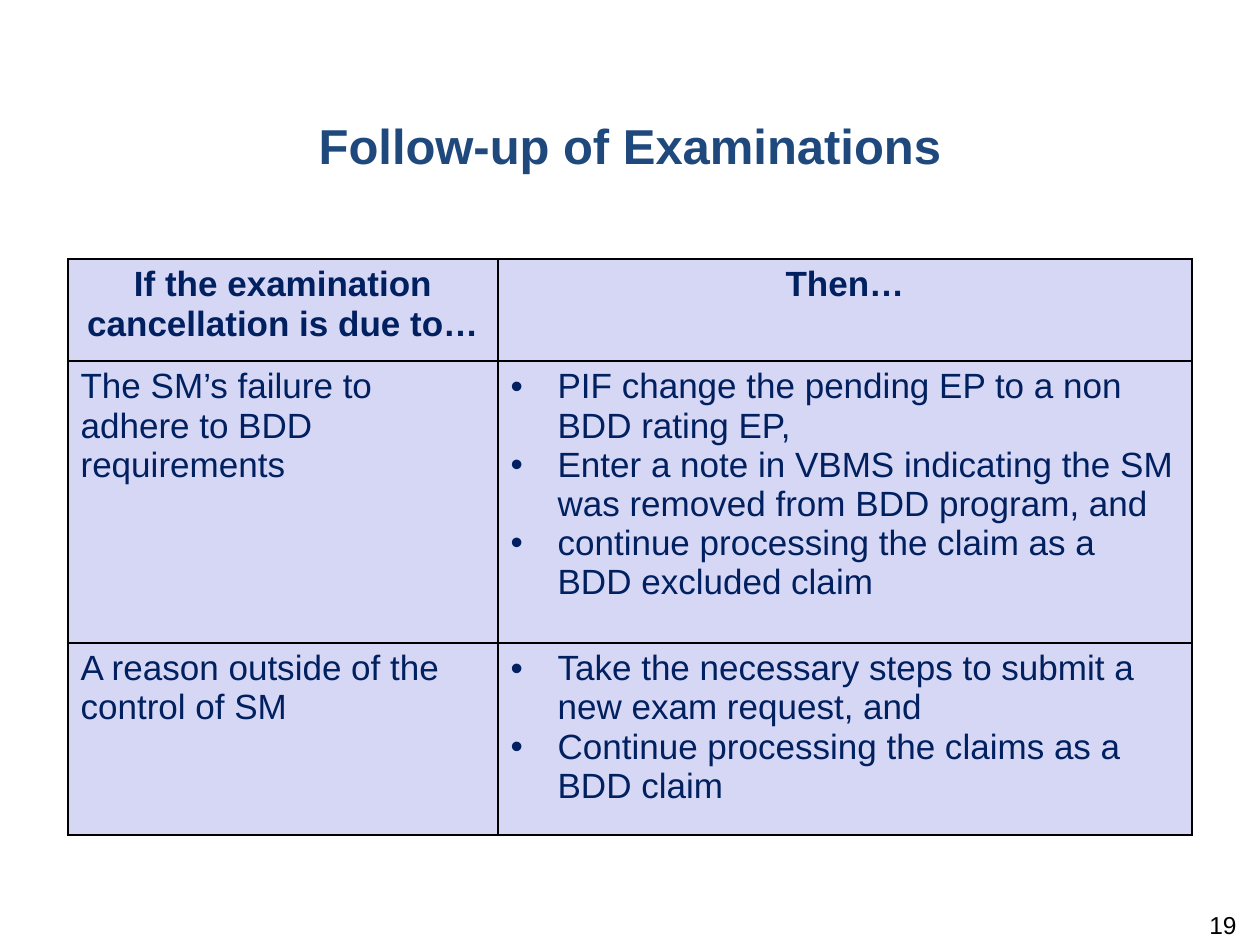
from lxml import etree
from pptx import Presentation
from pptx.dml.color import RGBColor
from pptx.enum.text import MSO_ANCHOR, PP_ALIGN
from pptx.oxml.ns import qn
from pptx.util import Pt

PX = 914400 // 126
CENTER, RIGHT, LEFT = PP_ALIGN.CENTER, PP_ALIGN.RIGHT, PP_ALIGN.LEFT
TOP = MSO_ANCHOR.TOP
FONT = "Arial"
COLORS = {"title": "1F497D", "table_text": "002060", "cell": "D6D6F5",
          "border": "000000", "number": "000000"}
INDENT = 47 * PX


def style(para, size, color, bold, align):
    para.alignment = align
    para.font.name = FONT
    para.font.size = Pt(size)
    para.font.bold = bold
    para.font.color.rgb = RGBColor.from_string(COLORS[color])


deck = Presentation()
deck.slide_width = 1260 * PX
deck.slide_height = 945 * PX
page = deck.slides.add_slide(deck.slide_layouts[6])

labels = [
    ("Follow-up of Examinations", (0, 110, 1260, 150), 6, 28, "title", True, CENTER),
    ("19", (955, 910, 294, 50), 0, 14, "number", False, RIGHT),
]
for text, bounds, inset_top, size, color, bold, align in labels:
    box = page.shapes.add_textbox(*(length * PX for length in bounds))
    frame = box.text_frame
    frame.word_wrap = True
    frame.vertical_anchor = TOP
    frame.margin_top = inset_top * PX
    para = frame.paragraphs[0]
    para.text = text
    para.space_after = Pt(6)
    style(para, size, color, bold, align)

rows = [
    (["If the examination cancellation is due to…"], ["Then…"]),
    (["The SM’s failure to adhere to BDD requirements"],
     ["PIF change the pending EP to a non BDD rating EP,",
      "Enter a note in VBMS indicating the SM was removed from BDD program, and",
      "continue processing the claim as a BDD excluded claim"]),
    (["A reason outside of the control of SM"],
     ["Take the necessary steps to submit a new exam request, and",
      "Continue processing the claims as a BDD claim"]),
]
column_widths = [430, 694]
row_heights = [102, 282, 192]
table = page.shapes.add_table(
    len(rows), len(column_widths), 68 * PX, 259 * PX,
    sum(column_widths) * PX, sum(row_heights) * PX).table
for column, width in zip(table.columns, column_widths):
    column.width = width * PX
for row, height in zip(table.rows, row_heights):
    row.height = height * PX

for row_index, row in enumerate(rows):
    for column_index, lines in enumerate(row):
        cell = table.cell(row_index, column_index)
        properties = cell._tc.get_or_add_tcPr()
        for side in ("lnL", "lnR", "lnT", "lnB"):
            border = etree.SubElement(properties, qn(f"a:{side}"), w=str(Pt(1)))
            paint = etree.SubElement(border, qn("a:solidFill"))
            etree.SubElement(paint, qn("a:srgbClr"), val=COLORS["border"])
        cell.fill.solid()
        cell.fill.fore_color.rgb = RGBColor.from_string(COLORS["cell"])
        cell.vertical_anchor = TOP

        header = row_index == 0
        cell.text_frame.text = "\n".join(lines)
        for para in cell.text_frame.paragraphs:
            if column_index == 1 and not header:
                bullet_properties = para._p.get_or_add_pPr()
                bullet_properties.set("marL", str(INDENT))
                bullet_properties.set("indent", str(-INDENT))
                etree.SubElement(bullet_properties, qn("a:buFont"), typeface=FONT)
                etree.SubElement(bullet_properties, qn("a:buChar"), char="•")
            style(para, 20, "table_text", header, CENTER if header else LEFT)

deck.save("out.pptx")
